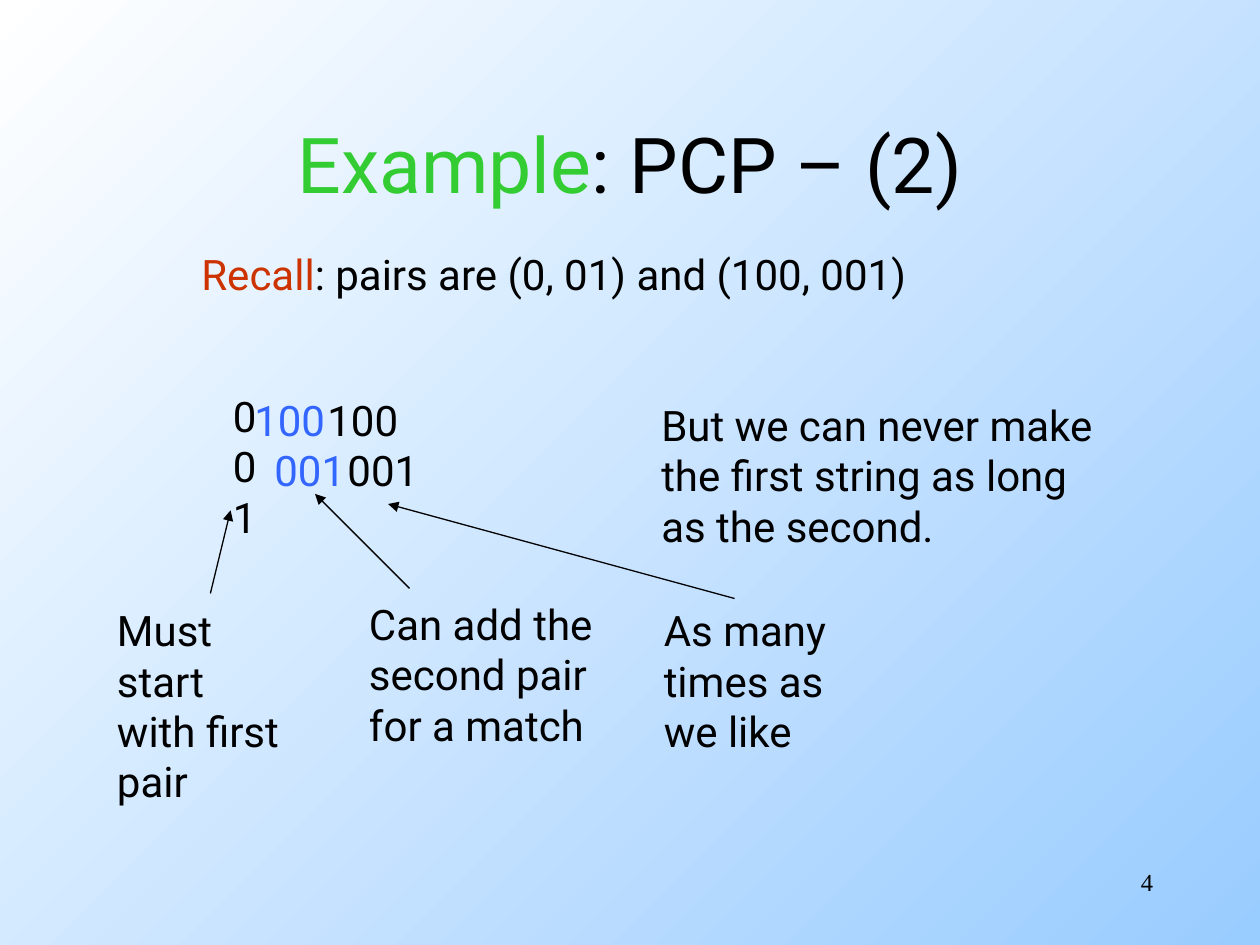
import pptx
import pptx.util
import pptx.dml.color
import pptx.enum.text
import pptx.enum.shapes
import pptx.oxml.ns
import lxml.etree

Inches = pptx.util.Inches
RGB = pptx.dml.color.RGBColor
Align = pptx.enum.text.PP_ALIGN
Anchor = pptx.enum.text.MSO_ANCHOR
qn = pptx.oxml.ns.qn

BLACK = RGB(0x00, 0x00, 0x00)
WHITE = RGB(0xFF, 0xFF, 0xFF)
SKY = RGB(0x99, 0xCC, 0xFF)
GREEN = RGB(0x33, 0xCC, 0x33)
RED = RGB(0xCC, 0x33, 0x00)
BLUE = RGB(0x33, 0x66, 0xFF)


def write(frame, lines, size=24, font="Roboto", color=BLACK, lead="",
          tint=BLACK, align=Align.LEFT, anchor=Anchor.TOP, indent=0):
    """Fill a frame; lead is a tinted start, indent moves the later lines."""
    frame.word_wrap = True
    frame.vertical_anchor = anchor
    for i, line in enumerate(lines):
        para = frame.paragraphs[0] if i == 0 else frame.add_paragraph()
        para.alignment = align
        if i and indent:
            props = para._p.get_or_add_pPr()
            props.set("marL", str(Inches(indent)))
            props.set("indent", "0")
        parts = [(line, color)]
        if i == 0 and lead:
            parts.insert(0, (lead, tint))
        for text, shade in parts:
            run = para.add_run()
            run.text = text
            run.font.size = pptx.util.Pt(size)
            run.font.name = font
            run.font.color.rgb = shade


deck = pptx.Presentation()
deck.slide_width, deck.slide_height = Inches(10), Inches(7.5)
slide = deck.slides.add_slide(deck.slide_layouts[5])

# Background, white at top left to sky blue at bottom right
fill = slide.background.fill
fill.gradient()
fill.gradient_angle = 315
for stop, shade, place in zip(fill.gradient_stops, (WHITE, SKY), (0, 1)):
    stop.color.rgb = shade
    stop.position = place

# Title
title = slide.shapes.title
title.left, title.top = Inches(0.75), Inches(0.67)
title.width, title.height = Inches(8.5), Inches(1.25)
write(title.text_frame, [": PCP – (2)"], size=44, lead="Example", tint=GREEN,
      align=Align.CENTER, anchor=Anchor.MIDDLE)

# Texts: place, lines, format
texts = [
    # Page number
    ((7.17, 6.83, 2.08, 0.5), ["4"],
     dict(size=14, font="Times New Roman", align=Align.RIGHT)),
    # The pairs
    ((1.5, 1.92, 5.99, 0.5), [": pairs are (0, 01) and (100, 001)"],
     dict(lead="Recall", tint=RED)),
    # The two strings, pair by pair
    ((1.75, 3.05, 0.5, 1.3), ["0", "0", "1"], {}),
    ((1.92, 3.08, 0.96, 0.9), ["100", "001"], dict(color=BLUE, indent=0.16)),
    ((2.5, 3.08, 0.96, 0.9), ["100", "001"], dict(indent=0.16)),
    # Notes on the pairs
    ((0.83, 4.75, 1.68, 1.7), ["Must start", "with first", "pair"], {}),
    ((2.83, 4.7, 2.05, 1.3), ["Can add the", "second pair", "for a match"], {}),
    ((5.17, 4.75, 1.53, 1.3), ["As many", "times as", "we like"], {}),
    # Conclusion
    ((5.15, 3.12, 3.75, 1.3),
     ["But we can never make", "the first string as long", "as the second."],
     {}),
]
for place, lines, form in texts:
    box = slide.shapes.add_textbox(*map(Inches, place))
    write(box.text_frame, lines, **form)

# Arrows from the notes to the strings
for ends in [(1.67, 4.71, 1.83, 4.05),
             (3.25, 4.67, 2.5, 3.92),
             (5.83, 4.75, 3.08, 4)]:
    arrow = slide.shapes.add_connector(
        pptx.enum.shapes.MSO_CONNECTOR.STRAIGHT, *map(Inches, ends))
    arrow.line.color.rgb = BLACK
    arrow.line.width = pptx.util.Pt(0.75)
    lxml.etree.SubElement(arrow.line._get_or_add_ln(), qn("a:tailEnd"),
                          type="triangle")
    lxml.etree.SubElement(arrow._element.spPr, qn("a:effectLst"))

deck.save("out.pptx")
